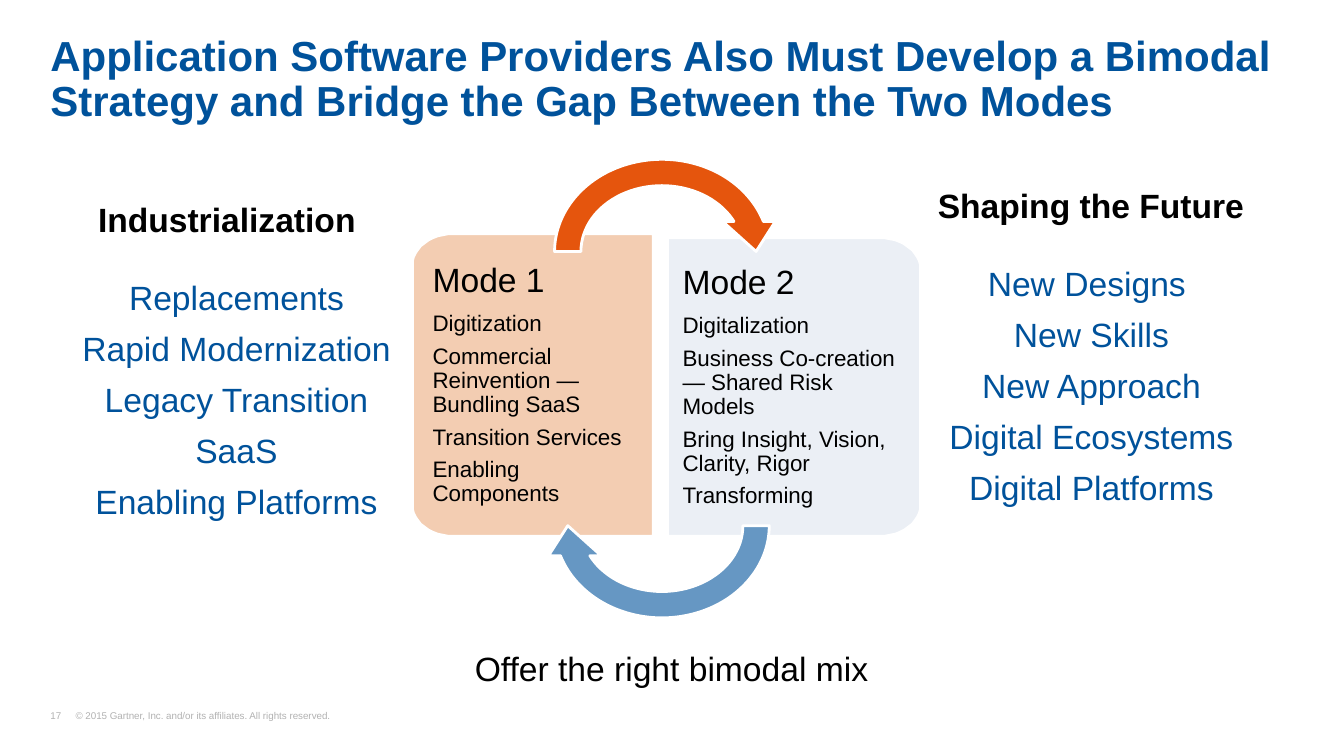
import math

import pptx
import pptx.dml.color
import pptx.enum.shapes
import pptx.enum.text
import pptx.oxml
import pptx.oxml.ns
import pptx.util

PX = 9144  # EMU per px, 100 px to the inch
BLUE, BLACK, WHITE, GRAY = "00529B", "000000", "FFFFFF", "B2B2B2"
ALIGN = pptx.enum.text.PP_ALIGN
ANCHOR = pptx.enum.text.MSO_ANCHOR
KIND = pptx.enum.shapes.MSO_SHAPE


def px(num):
    return pptx.util.Emu(num * PX)


def color(code):
    return pptx.dml.color.RGBColor.from_string(code)


def place(shape, left, top, width, height):
    shape.left, shape.top = px(left), px(top)
    shape.width, shape.height = px(width), px(height)


def paint(shape, fill):
    shape.shadow.inherit = False
    shape.fill.solid()
    shape.fill.fore_color.rgb = color(fill)
    shape.line.color.rgb = color(WHITE)
    shape.line.width = pptx.util.Pt(2)


def setup(frame, inset, wrap=True, anchor=ANCHOR.TOP):
    frame.auto_size = pptx.enum.text.MSO_AUTO_SIZE.NONE
    frame.word_wrap = wrap
    frame.vertical_anchor = anchor
    (frame.margin_left, frame.margin_top,
     frame.margin_right, frame.margin_bottom) = map(px, inset)


def add_line(frame, text, size, code, bold=False, align=ALIGN.LEFT,
             before=0, after=0):
    """Write the next paragraph of a frame and return it."""
    first = not frame.paragraphs[0].runs
    para = frame.paragraphs[0] if first else frame.add_paragraph()
    para.alignment = align
    para.line_spacing = 0.9
    para.space_before = pptx.util.Pt(0 if first else before)
    para.space_after = pptx.util.Pt(after)
    run = para.add_run()
    run.text = text
    run.font.name = "Arial"
    run.font.size = pptx.util.Pt(size)
    run.font.bold = bold
    run.font.color.rgb = color(code)
    return para


def add_props(para, tag, **attrs):
    props = para._p.get_or_add_pPr()
    item = pptx.oxml.parse_xml(f"<a:{tag} {pptx.oxml.ns.nsdecls('a')}/>")
    for key, val in attrs.items():
        item.set(key, val)
    props.append(item)
    return item


def add_label(slide, box, text, bold=False):
    label = slide.shapes.add_textbox(*map(px, box))
    setup(label.text_frame, (10, 5, 10, 5), wrap=False)
    add_line(label.text_frame, text, 24, BLACK, bold, ALIGN.CENTER)


def fill_list(holder, box, items):
    place(holder, *box)
    setup(holder.text_frame, (0, 5, 0, 5), wrap=False)
    for item in items:
        para = add_line(holder.text_frame, item, 24, BLUE,
                        align=ALIGN.CENTER, before=8, after=2.6)
        props = para._p.get_or_add_pPr()
        props.set("marL", "0")
        props.set("indent", "0")
        add_props(para, "buNone")


def add_panel(slide, box, fill, inset, head, items, flip=False):
    """Draw a panel with two round corners on its outer side."""
    left, top, width, height = box
    wide, tall, steps = 40, 31, 12
    turns = [math.pi / 2 * i / steps for i in range(steps + 1)]
    upper = [(wide * (1 - math.sin(t)), tall * (1 - math.cos(t))) for t in turns]
    lower = [(x, height - y) for x, y in reversed(upper)]
    points = [(width, 0)] + upper + lower + [(width, height)]
    points = [(left + (width - x if flip else x), top + y) for x, y in points]
    form = slide.shapes.build_freeform(*points[0], scale=PX)
    form.add_line_segments(points[1:], close=True)
    panel = form.convert_to_shape()
    paint(panel, fill)
    setup(panel.text_frame, inset, anchor=ANCHOR.MIDDLE)
    add_line(panel.text_frame, head, 24, BLACK, after=9)
    for item in items:
        add_line(panel.text_frame, item, 16, BLACK, after=6)


def add_arrow(slide, top, fill, turn=0):
    arrow = slide.shapes.add_shape(
        KIND.CIRCULAR_ARROW, *map(px, (537, top, 239, 209)))
    arrow.rotation = turn
    paint(arrow, fill)


def add_foot(slide):
    foot = slide.shapes.add_textbox(*map(px, (50, 705, 335, 11)))
    setup(foot.text_frame, (0, 0, 0, 0), anchor=ANCHOR.BOTTOM)
    para = add_line(
        foot.text_frame,
        "17\t© 2015 Gartner, Inc. and/or its affiliates. All rights reserved.",
        7, GRAY)
    tabs = add_props(para, "tabLst")
    stop = pptx.oxml.parse_xml(f"<a:tab {pptx.oxml.ns.nsdecls('a')}/>")
    stop.set("pos", str(px(25)))
    stop.set("algn", "l")
    tabs.append(stop)


def main():
    deck = pptx.Presentation()
    deck.slide_width, deck.slide_height = px(1333), px(750)
    slide = deck.slides.add_slide(deck.slide_layouts[3])

    # Title
    title = slide.shapes.title
    place(title, 50, 25, 1233, 101)
    setup(title.text_frame, (0, 10, 0, 0))
    add_line(title.text_frame,
             "Application Software Providers Also Must Develop a Bimodal "
             "Strategy and Bridge the Gap Between the Two Modes",
             30, BLUE, bold=True)

    # Mode panels
    add_panel(slide, (409, 232, 239, 300), "F3CDB2", (20, 26, 15, 26),
              "Mode 1",
              ["Digitization", "Commercial Reinvention — Bundling SaaS",
               "Transition Services", "Enabling Components"])
    add_panel(slide, (662, 236, 251, 296), "EBEFF5", (15, 26, 20, 26),
              "Mode 2",
              ["Digitalization", "Business Co-creation — Shared Risk Models",
               "Bring Insight, Vision, Clarity, Rigor", "Transforming"],
              flip=True)

    # Cycle arrows
    add_arrow(slide, 145, "E5550D")
    add_arrow(slide, 417, "6697C3", turn=180)

    # Side lists and their headings
    fill_list(slide.placeholders[1], (80, 274, 309, 256),
              ["Replacements", "Rapid Modernization", "Legacy Transition",
               "SaaS", "Enabling Platforms"])
    fill_list(slide.placeholders[2], (940, 260, 285, 256),
              ["New Designs ", "New Skills", "New Approach",
               "Digital Ecosystems", "Digital Platforms"])
    add_label(slide, (86, 197, 278, 46), "Industrialization", bold=True)
    add_label(slide, (919, 183, 326, 46), "Shaping the Future", bold=True)

    # Caption and footer
    add_label(slide, (459, 642, 414, 46), "Offer the right bimodal mix")
    add_foot(slide)
    deck.save("out.pptx")


if __name__ == "__main__":
    main()
